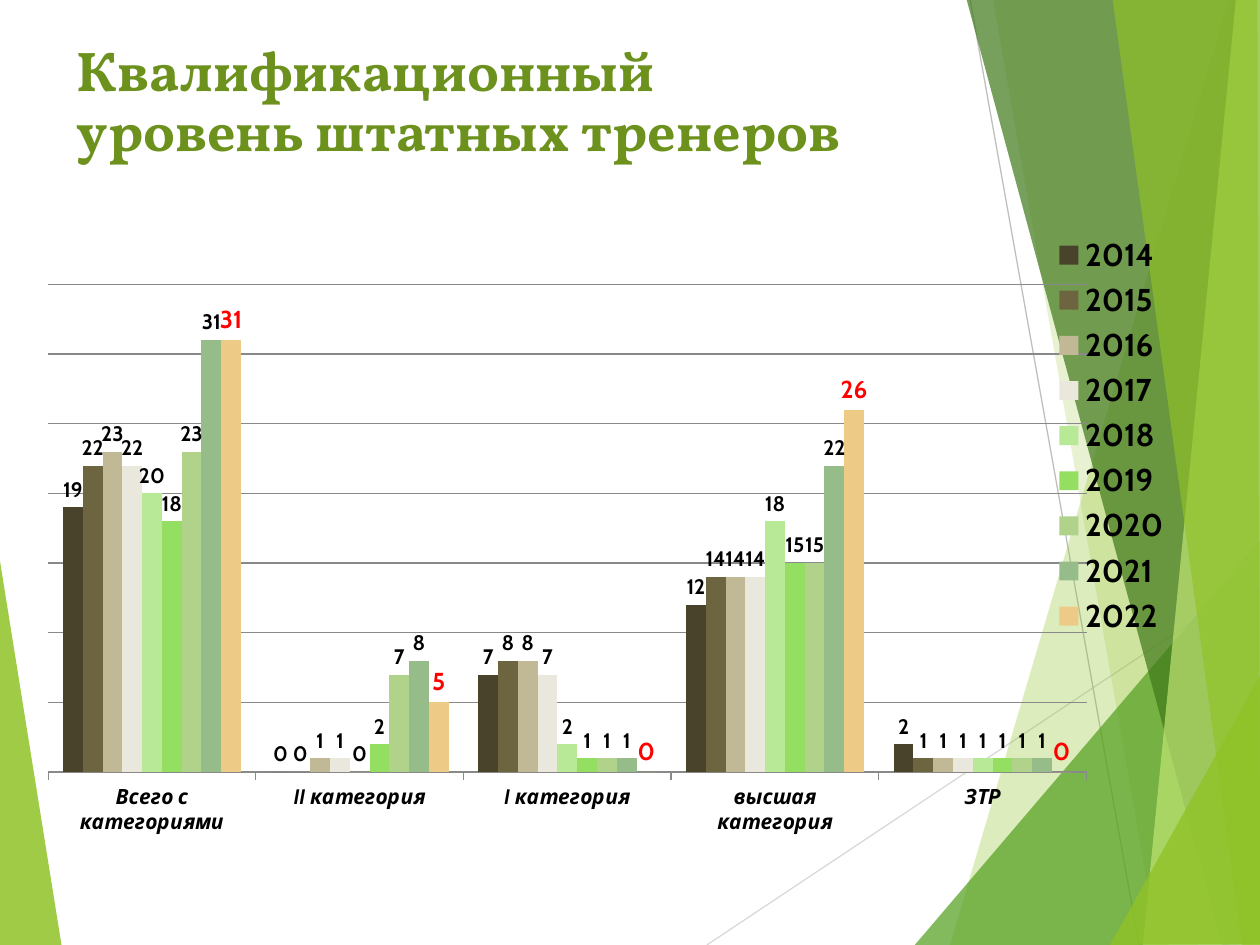
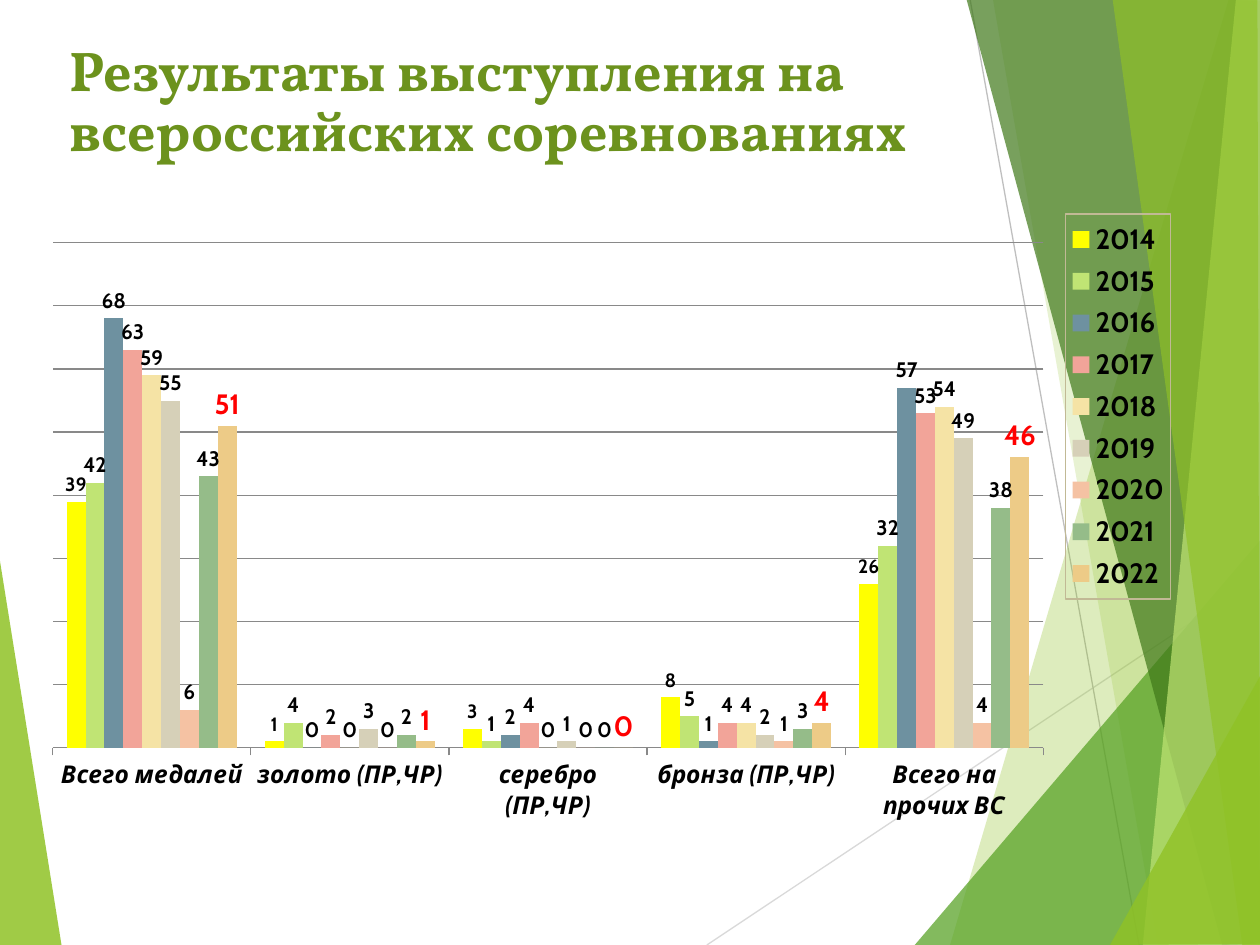
import lxml.etree
import pptx
import pptx.chart.data
import pptx.dml.color
import pptx.enum.chart
import pptx.enum.shapes
import pptx.oxml
import pptx.oxml.ns
import pptx.util
from pptx.util import Inches

COLORS = {
    "title": "6C921D", "text": "000000", "accent_text": "FF0000", "grid": "898989",
    "legend_border": "C1B995", "light_line": "D9D9D9", "line": "BFBFBF",
    "lime": "90C226", "green": "54A021", "dark_green": "3F7819", "pale_lime": "C0E474",
}
TITLE_FONT = "Vollkorn"
CHART_FONT = "Cabin"
YEARS = [str(year) for year in range(2014, 2023)]

FACETS_BEHIND_LINES = [
    ("lime", 85, [(-0.01, 4.39), (0.49, 7.51), (-0.01, 7.5)]),
]
RAYS = [
    ("light_line", (5.61, 7.5), (10.01, 4.57)),
    ("line", (7.7, 0), (9.04, 7.5)),
]
FACETS_ABOVE_LINES = [
    ("lime", 30, [(9.75, 0), (7.54, 7.5), (10.02, 7.51), (10.01, 0.01)]),
    ("lime", 20, [(7.88, -0.01), (9.19, 7.5), (10.01, 7.5), (10.01, -0.01)]),
    ("green", 72, [(7.26, 7.5), (10, 4.29), (10.01, 7.5)]),
    ("dark_green", 70, [(7.67, -0.01), (9.7, 7.5), (10.01, 7.49), (10.01, -0.01)]),
    ("pale_lime", 70, [(9.81, -0.01), (9.07, 7.5), (10.01, 7.5), (10, -0.01)]),
    ("lime", 65, [(8.83, -0.01), (9.86, 7.5), (10, 7.5), (9.98, -0.01)]),
    ("lime", 80, [(8.81, 7.5), (10.01, 5.35), (10.01, 7.49)]),
]

COACHES = {
    "box": (0, 1.47, 9.8, 5.43),
    "plot": (0.039, 0.145, 0.841, 0.713),
    "legend": (0.85, 0.064, 0.1, 0.604),
    "legend_size": 18, "legend_border": False,
    "category_size": 12, "maximum": 35, "step": 5,
    "label_sizes": [12] * 8 + [14],
    "categories": ["Всего с категориями", "II категория", "I категория",
                   "высшая категория", "ЗТР"],
    "colors": ["48432A", "6D6540", "C1B995", "EAE8DC", "B7E996", "94DE61",
               "B1D28A", "95BC89", "EDCB87"],
    "values": [
        (19, 0, 7, 12, 2), (22, 0, 8, 14, 1), (23, 1, 8, 14, 1),
        (22, 1, 7, 14, 1), (20, 0, 2, 18, 1), (18, 2, 1, 15, 1),
        (23, 7, 1, 15, 1), (31, 8, 1, 22, 1), (31, 5, 0, 26, 0),
    ],
}
MEDALS = {
    "box": (-0.35, 1.62, 9.71, 4.95),
    "plot": (0.079, 0.062, 0.81, 0.81),
    "legend": (0.907, 0.016, 0.086, 0.617),
    "legend_size": 16, "legend_border": True,
    "category_size": 14, "maximum": 80, "step": 10,
    "label_sizes": [11] + [12] * 7 + [16],
    "categories": ["Всего медалей", "золото (ПР,ЧР)", "серебро (ПР,ЧР)",
                   "бронза (ПР,ЧР)", "Всего на прочих ВС"],
    "colors": ["FFFF00", "C0E474", "6E91A0", "F2A499", "F5E3A5", "D6D0B8",
               "F5C2A3", "95BC89", "EDCB87"],
    "values": [
        (39, 1, 3, 8, 26), (42, 4, 1, 5, 32), (68, 0, 2, 1, 57),
        (63, 2, 4, 4, 53), (59, 0, 0, 4, 54), (55, 3, 1, 2, 49),
        (6, 0, 0, 1, 4), (43, 2, 0, 3, 38), (51, 1, 0, 4, 46),
    ],
}


def rgb(value):
    """Return the colour for a palette name or a hex string."""
    return pptx.dml.color.RGBColor.from_string(COLORS.get(value, value))


def style_font(font, name, size, color, italic=False):
    """Apply a bold typeface, size and colour."""
    font.name = name
    font.size = pptx.util.Pt(size)
    font.bold = True
    font.italic = italic
    font.color.rgb = rgb(color)


def style_line(line, color):
    """Give a line its colour and the shared thin width."""
    line.color.rgb = rgb(color)
    line.width = pptx.util.Pt(0.75)


def add_facet(slide, color, opacity, points):
    """Draw one translucent polygon."""
    scaled = [(round(x * 100), round(y * 100)) for x, y in points]
    builder = slide.shapes.build_freeform(*scaled[0], scale=Inches(0.01))
    builder.add_line_segments(scaled[1:], close=True)
    shape = builder.convert_to_shape()
    shape.shadow.inherit = False
    shape.fill.solid()
    shape.fill.fore_color.rgb = rgb(color)
    shape.line.fill.background()
    fill_color = shape.element.xpath("p:spPr/a:solidFill/a:srgbClr")[0]
    alpha = lxml.etree.SubElement(fill_color, pptx.oxml.ns.qn("a:alpha"))
    alpha.set("val", str(opacity * 1000))


def add_ray(slide, color, start, end):
    """Draw one thin straight line across the background."""
    ends = [Inches(value) for value in start + end]
    connector = slide.shapes.add_connector(pptx.enum.shapes.MSO_CONNECTOR.STRAIGHT, *ends)
    style_line(connector.line, color)
    properties = connector.element.xpath("p:spPr")[0]
    lxml.etree.SubElement(properties, pptx.oxml.ns.qn("a:effectLst"))


def add_backdrop(slide):
    """Draw the green facets shared by all slides."""
    for facet in FACETS_BEHIND_LINES:
        add_facet(slide, *facet)
    for ray in RAYS:
        add_ray(slide, *ray)
    for facet in FACETS_ABOVE_LINES:
        add_facet(slide, *facet)


def add_title(slide, text, left):
    """Place the two-line slide title."""
    box = slide.shapes.add_textbox(Inches(left), Inches(0.29), Inches(9), Inches(1.25))
    text_frame = box.text_frame
    text_frame.word_wrap = True
    text_frame.text = text
    paragraph = text_frame.paragraphs[0]
    paragraph.line_spacing = 0.9
    for run in paragraph.runs:
        style_font(run.font, TITLE_FONT, 32, "title")


def make_layout(fractions, inner=False):
    """Build a manual chart layout from left, top, width and height."""
    target = '<c:layoutTarget val="inner"/>' if inner else ""
    modes = '<c:xMode val="edge"/><c:yMode val="edge"/>'
    sizes = "".join(f'<c:{tag} val="{value}"/>' for tag, value in zip("xywh", fractions))
    return pptx.oxml.parse_xml(
        f'<c:layout {pptx.oxml.ns.nsdecls("c")}><c:manualLayout>'
        f"{target}{modes}{sizes}</c:manualLayout></c:layout>"
    )


def format_axes(chart, details):
    """Show the category axis and leave only gridlines of the value axis."""
    category_axis = chart.category_axis
    category_axis.major_tick_mark = pptx.enum.chart.XL_TICK_MARK.OUTSIDE
    style_line(category_axis.format.line, "grid")
    style_font(category_axis.tick_labels.font, CHART_FONT, details["category_size"],
               "text", italic=True)
    value_axis = chart.value_axis
    value_axis.minimum_scale = 0
    value_axis.maximum_scale = details["maximum"]
    value_axis.major_unit = details["step"]
    value_axis.has_major_gridlines = True
    style_line(value_axis.major_gridlines.format.line, "grid")
    value_axis.visible = False


def format_series(chart, details):
    """Colour the columns and label them with their values."""
    plot = chart.plots[0]
    plot.gap_width = 150
    plot.overlap = 0
    plot.vary_by_categories = False
    for series, color, size in zip(plot.series, details["colors"], details["label_sizes"]):
        series.format.fill.solid()
        series.format.fill.fore_color.rgb = rgb(color)
        labels = series.data_labels
        labels.show_value = True
        labels.position = pptx.enum.chart.XL_LABEL_POSITION.OUTSIDE_END
        label_color = "accent_text" if series.name == YEARS[-1] else "text"
        style_font(labels.font, CHART_FONT, size, label_color)


def format_legend(chart, details):
    """Place the legend on the right, framed where wanted."""
    chart.has_legend = True
    legend = chart.legend
    legend.position = pptx.enum.chart.XL_LEGEND_POSITION.RIGHT
    legend.include_in_layout = False
    style_font(legend.font, CHART_FONT, details["legend_size"], "text")
    element = chart.element.xpath("c:chart/c:legend")[0]
    for layout in element.xpath("c:layout"):
        element.remove(layout)
    element.xpath("c:legendPos")[0].addnext(make_layout(details["legend"]))
    if details["legend_border"]:
        border = pptx.oxml.parse_xml(
            f'<c:spPr {pptx.oxml.ns.nsdecls("c", "a")}><a:ln w="9525"><a:solidFill>'
            f'<a:srgbClr val="{COLORS["legend_border"]}"/></a:solidFill></a:ln></c:spPr>'
        )
        element.xpath("c:txPr")[0].addprevious(border)


def add_column_chart(slide, details):
    """Add a clustered column chart with one series per year."""
    data = pptx.chart.data.CategoryChartData()
    data.categories = details["categories"]
    for year, values in zip(YEARS, details["values"]):
        data.add_series(year, values)
    box = [Inches(value) for value in details["box"]]
    chart_type = pptx.enum.chart.XL_CHART_TYPE.COLUMN_CLUSTERED
    chart = slide.shapes.add_chart(chart_type, *box, data).chart
    chart.has_title = False
    style_font(chart.font, CHART_FONT, 18, "text")
    format_axes(chart, details)
    format_series(chart, details)
    format_legend(chart, details)
    plot_area = chart.element.xpath("c:chart/c:plotArea")[0]
    for layout in plot_area.xpath("c:layout"):
        plot_area.remove(layout)
    plot_area.insert(0, make_layout(details["plot"], inner=True))


def add_chart_slide(presentation, title, title_left, details):
    """Add a slide with the backdrop, a title and a chart."""
    slide = presentation.slides.add_slide(presentation.slide_layouts[6])
    add_backdrop(slide)
    add_title(slide, title, title_left)
    add_column_chart(slide, details)


def main():
    """Build and save the presentation."""
    presentation = pptx.Presentation()
    presentation.slide_width = Inches(10)
    presentation.slide_height = Inches(7.5)
    add_chart_slide(presentation, "Квалификационный\vуровень штатных тренеров", 0.51, COACHES)
    add_chart_slide(presentation, "Результаты выступления на\vвсероссийских соревнованиях",
                    0.45, MEDALS)
    presentation.save("out.pptx")


if __name__ == "__main__":
    main()
